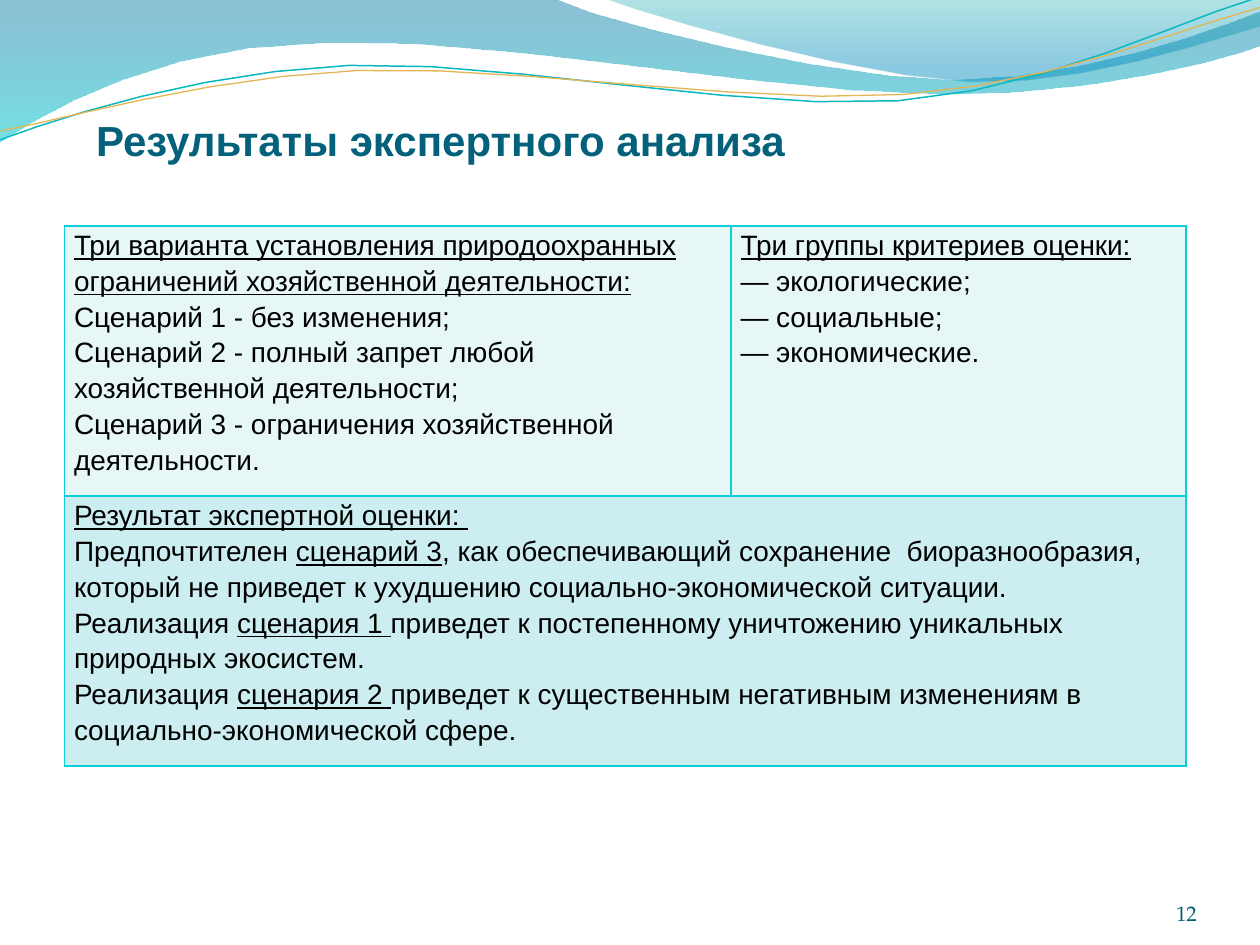
from lxml.etree import SubElement
from pptx import Presentation
from pptx.dml.color import RGBColor
from pptx.enum.text import MSO_ANCHOR as Anchor, PP_ALIGN as Align
from pptx.oxml.ns import qn
from pptx.util import Pt


def color(value):
    return RGBColor.from_string(value)


def add_outline(shapes, start, segments, close):
    points = []
    end = start
    steps = 6
    for segment in segments:
        if len(segment) == 2:
            points.append(segment)
        else:
            controls = [end, segment[:2], segment[2:4], segment[4:]]
            for step in range(1, steps + 1):
                t = step / steps
                weights = ((1 - t) ** 3, 3 * t * (1 - t) ** 2, 3 * t * t * (1 - t), t ** 3)
                points.append(tuple(sum(w * c[axis] for w, c in zip(weights, controls)) for axis in (0, 1)))
        end = segment[-2:]
    builder = shapes.build_freeform(Pt(start[0]), Pt(start[1]))
    builder.add_line_segments([(Pt(x), Pt(y)) for x, y in points], close=close)
    shape = builder.convert_to_shape()
    shape.shadow.inherit = False
    return shape


presentation = Presentation()
presentation.slide_width, presentation.slide_height = Pt(720), Pt(540)
slide = presentation.slides.add_slide(presentation.slide_layouts[6])

waves = [
    ((0, 0), [(316.8, -0.7), (342.7, 12.2, 478.1, 45.4, 545.8, 45.4),
              (614.2, 45.4, 689.8, 18.7, 720, 6.5), (720.7, 25.9),
              (707.8, 31.7, 626.4, 54.7, 537.1, 54), (447.8, 54, 275, 20.2, 185, 24.5),
              (92.9, 25.9, 33.1, 59.8, -0.7, 81.4)],
     [(0, "0074A1", 45), (1, "00C6CF", 55)]),
    ((344.9, -0.7), [(366.5, 7.9, 491, 44.6, 553.7, 46.8),
                     (616.3, 49.7, 691.9, 23, 720, 15.1), (720, 0)],
     [(0, "00A1A9", 30), (0.8, "008BBF", 45)]),
]
for start, segments, stops in waves:
    wave = add_outline(slide.shapes, start, segments, True)
    wave.line.fill.background()
    wave.fill.gradient()
    wave.fill.gradient_angle = 270
    for stop, (position, value, opacity) in zip(wave.fill.gradient_stops, stops):
        stop.position = position
        stop.color.rgb = color(value)
    for element, (position, value, opacity) in zip(wave.element.spPr.iter(qn("a:srgbClr")), stops):
        SubElement(element, qn("a:alpha"), val=str(opacity * 1000))

curves = [
    ((0, 79.9), [(34.6, 67, 113.8, 41, 199.4, 37.4), (284.4, 33.8, 427, 64.1, 513.4, 57.6),
                 (599.8, 51.1, 675.4, 10.8, 718.6, -1.4)], "0AB8BF", 0.85),
    ((0, 74.9), [(33.8, 69.1, 118.1, 43.9, 203.8, 40.3), (290.2, 36.7, 429.8, 60.5, 516.2, 54),
                 (601.9, 48.2, 677.5, 15.1, 720, 4.3)], "E3B653", 0.75),
]
for start, segments, value, width in curves:
    curve = add_outline(slide.shapes, start, segments, False)
    curve.fill.background()
    curve.line.color.rgb = color(value)
    curve.line.width = Pt(width)

labels = [
    ("Результаты экспертного анализа", (54.9, 60.5, 641, 33.8), 24, "Arial", "04617B", True, Align.LEFT),
    ("12", (624.2, 500.4, 59.8, 28.8), 12, "TeX Gyre Pagella", "045D75", False, Align.RIGHT),
]
for text, box, size, font, value, bold, align in labels:
    frame = slide.shapes.add_textbox(*map(Pt, box)).text_frame
    frame.word_wrap = True
    frame.vertical_anchor = Anchor.BOTTOM
    frame.margin_left = frame.margin_right = frame.margin_top = frame.margin_bottom = 0
    paragraph = frame.paragraphs[0]
    paragraph.alignment = align
    run = paragraph.add_run()
    run.text = text
    run.font.size, run.font.name, run.font.bold = Pt(size), font, bold
    run.font.color.rgb = color(value)

table_frame = slide.shapes.add_table(2, 2, Pt(36.9), Pt(129), Pt(640.8), Pt(308.9))
table = table_frame.table
table.first_row = table.horz_banding = False
table.columns[0].width, table.columns[1].width = Pt(380.9), Pt(259.9)
for table_row in table.rows:
    table_row.height = 0
table_frame.height = Pt(308.9)
table.cell(1, 0).merge(table.cell(1, 1))

for row, fill in enumerate(("E7F7F8", "CCEEF1")):
    for column in range(2):
        cell = table.cell(row, column)
        cell.margin_left = cell.margin_right = Pt(5.4)
        cell.margin_top = cell.margin_bottom = 0
        properties = cell._tc.get_or_add_tcPr()
        for side in ("a:lnL", "a:lnR", "a:lnT", "a:lnB"):
            border = SubElement(properties, qn(side), w=str(Pt(1)))
            SubElement(SubElement(border, qn("a:solidFill")), qn("a:srgbClr"), val="0BD0D9")
        cell.fill.solid()
        cell.fill.fore_color.rgb = color(fill)

cell_texts = {
    (0, 0): [
        [("Три варианта установления природоохранных ограничений хозяйственной деятельности:", True)],
        [("Сценарий 1 - без изменения;", False)],
        [("Сценарий 2 - полный запрет любой хозяйственной деятельности;", False)],
        [("Сценарий 3 - ограничения хозяйственной деятельности.", False)],
    ],
    (0, 1): [
        [("Три группы критериев оценки:", True)],
        [("— экологические;", False)],
        [("— социальные;", False)],
        [("— экономические.", False)],
    ],
    (1, 0): [
        [("Результат экспертной оценки: ", True)],
        [("Предпочтителен ", False), ("сценарий 3", True),
         (", как обеспечивающий сохранение  биоразнообразия, который не приведет к ухудшению "
          "социально-экономической ситуации.", False)],
        [("Реализация ", False), ("сценария 1 ", True),
         ("приведет к постепенному уничтожению уникальных природных экосистем.", False)],
        [("Реализация ", False), ("сценария 2 ", True),
         ("приведет к существенным негативным изменениям в социально-экономической сфере.", False)],
    ],
}
for (row, column), paragraphs in cell_texts.items():
    frame = table.cell(row, column).text_frame
    for index, runs in enumerate(paragraphs):
        paragraph = frame.add_paragraph() if index else frame.paragraphs[0]
        paragraph.line_spacing = 1.15
        for text, underline in runs:
            run = paragraph.add_run()
            run.text = text
            run.font.size, run.font.name, run.font.underline = Pt(16), "Arial", underline
            run.font.color.rgb = color("000000")

presentation.save("out.pptx")
